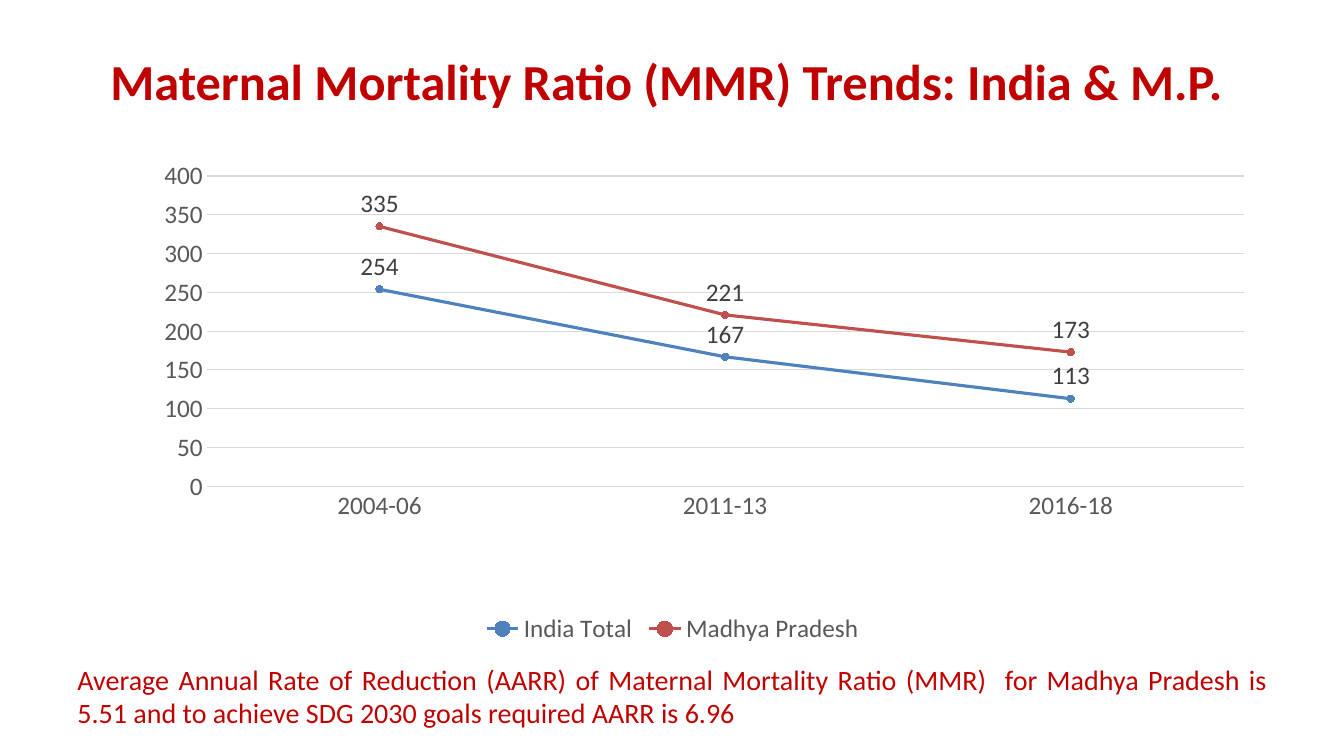
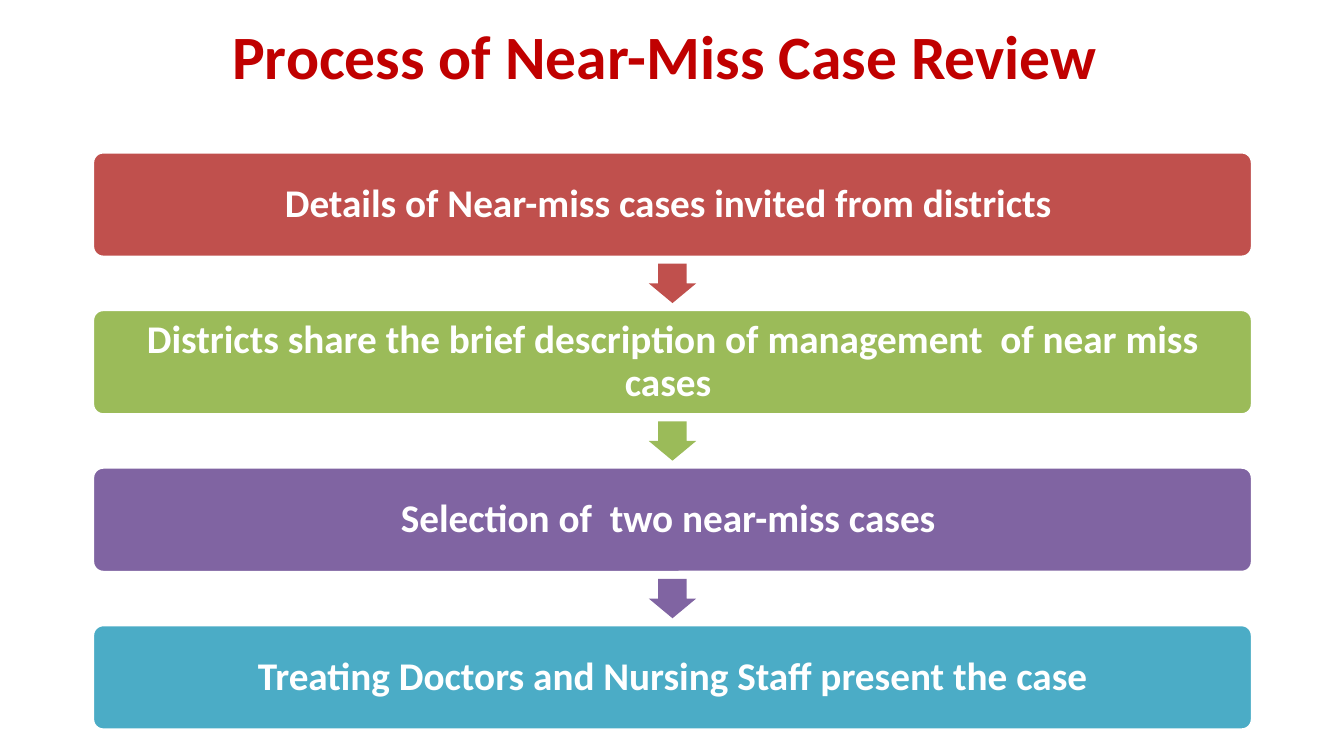
from lxml import etree
from pptx import Presentation
from pptx.chart.data import CategoryChartData
from pptx.dml.color import RGBColor
from pptx.enum.chart import (XL_CHART_TYPE, XL_LABEL_POSITION, XL_LEGEND_POSITION,
                             XL_MARKER_STYLE, XL_TICK_MARK)
from pptx.enum.shapes import MSO_SHAPE
from pptx.enum.text import MSO_ANCHOR, MSO_AUTO_SIZE, PP_ALIGN
from pptx.oxml.ns import qn
from pptx.util import Inches, Pt

LINE_MARKERS = XL_CHART_TYPE.LINE_MARKERS
LABEL_ABOVE = XL_LABEL_POSITION.ABOVE
LEGEND_BOTTOM = XL_LEGEND_POSITION.BOTTOM
CIRCLE = XL_MARKER_STYLE.CIRCLE
NO_TICK = XL_TICK_MARK.NONE
ROUND_RECT = MSO_SHAPE.ROUNDED_RECTANGLE
DOWN_ARROW = MSO_SHAPE.DOWN_ARROW
MIDDLE = MSO_ANCHOR.MIDDLE
NO_FIT, GROW = MSO_AUTO_SIZE.NONE, MSO_AUTO_SIZE.SHAPE_TO_FIT_TEXT
CENTER, JUSTIFY = PP_ALIGN.CENTER, PP_ALIGN.JUSTIFY

FONT = "Calibri"
COLORS = {
    "heading": "C00000", "white": "FFFFFF", "blue": "4F81BD", "red": "C0504D",
    "green": "9BBB59", "purple": "8064A2", "teal": "4BACC6",
    "grid": "D9D9D9", "axis": "595959", "label": "404040",
}
WIDTH, HEIGHT = 13.33, 7.5
TITLE_ONLY = 5


def rgb(name):
    return RGBColor.from_string(COLORS[name])


def set_font(font, size, color, bold=False):
    font.name, font.size, font.bold = FONT, Pt(size), bold
    font.color.rgb = rgb(color)


def set_line(line, color, width):
    line.color.rgb = rgb(color)
    line.width = Pt(width)


def set_plot_layout(chart, **fractions):
    """Fix the inner plot area as fractions of the chart frame."""
    plot_area = chart._chartSpace.find(f"{qn('c:chart')}/{qn('c:plotArea')}")
    for old in plot_area.findall(qn("c:layout")):
        plot_area.remove(old)
    layout = etree.Element(qn("c:layout"))
    manual = etree.SubElement(layout, qn("c:manualLayout"))
    settings = {"layoutTarget": "inner", "xMode": "edge", "yMode": "edge", **fractions}
    for tag, value in settings.items():
        etree.SubElement(manual, qn(f"c:{tag}")).set("val", str(value))
    plot_area.insert(0, layout)


class DeckBuilder:
    def __init__(self):
        self.deck = Presentation()
        self.deck.slide_width, self.deck.slide_height = Inches(WIDTH), Inches(HEIGHT)
        self.page = None

    def add_page(self, title, size, left, top, width, height):
        self.page = self.deck.slides.add_slide(self.deck.slide_layouts[TITLE_ONLY])
        box = self.page.shapes.title
        box.left, box.top = Inches(left), Inches(top)
        box.width, box.height = Inches(width), Inches(height)
        self.fill_text(box.text_frame, title, size, "heading", CENTER, bold=True)
        box.text_frame.vertical_anchor = MIDDLE
        box.text_frame.auto_size = NO_FIT

    def fill_text(self, frame, text, size, color, align, bold=False):
        frame.word_wrap = True
        para = frame.paragraphs[0]
        para.text, para.alignment = text, align
        set_font(para.font, size, color, bold)
        return para

    def note(self, text, left, top, width, height):
        box = self.page.shapes.add_textbox(
            Inches(left), Inches(top), Inches(width), Inches(height))
        self.fill_text(box.text_frame, text, 20, "heading", JUSTIFY)
        box.text_frame.auto_size = GROW

    def shape(self, kind, left, top, width, height, color, adjustments):
        shape = self.page.shapes.add_shape(
            kind, Inches(left), Inches(top), Inches(width), Inches(height))
        shape.shadow.inherit = False
        shape.fill.solid()
        shape.fill.fore_color.rgb = rgb(color)
        shape.line.fill.background()
        for index, value in enumerate(adjustments):
            shape.adjustments[index] = value
        return shape

    def step(self, text, left, top, width, height, color):
        box = self.shape(ROUND_RECT, left, top, width, height, color, [0.1])
        set_line(box.line, "white", 2)
        frame = box.text_frame
        frame.margin_left = frame.margin_right = Inches(0.15)
        frame.margin_top = frame.margin_bottom = Inches(0.12)
        frame.vertical_anchor = MIDDLE
        para = self.fill_text(frame, text, 28, "white", CENTER, bold=True)
        para.line_spacing = 0.9

    def line_chart(self, categories, series, left, top, width, height):
        """Draw a line chart; series maps a name to its values and colour."""
        data = CategoryChartData()
        data.categories = categories
        for name, (values, _) in series.items():
            data.add_series(name, values)
        chart = self.page.shapes.add_chart(
            LINE_MARKERS, Inches(left), Inches(top), Inches(width), Inches(height),
            data).chart
        set_font(chart.font, 18, "axis")
        chart.has_title = False
        chart.has_legend = True
        chart.legend.position = LEGEND_BOTTOM
        chart.legend.include_in_layout = False
        set_font(chart.legend.font, 18, "axis")
        for axis in (chart.category_axis, chart.value_axis):
            axis.major_tick_mark = axis.minor_tick_mark = NO_TICK
            set_font(axis.tick_labels.font, 18, "axis")
        set_line(chart.category_axis.format.line, "grid", 0.75)
        values_axis = chart.value_axis
        values_axis.format.line.fill.background()
        values_axis.minimum_scale, values_axis.maximum_scale = 0, 400
        values_axis.major_unit = 50
        set_line(values_axis.major_gridlines.format.line, "grid", 0.75)
        chart.plots[0].vary_by_categories = False
        for line, (_, color) in zip(chart.plots[0].series, series.values()):
            self.style_series(line, color)
        set_plot_layout(chart, x=0.115, y=0.046, w=0.857, h=0.626)

    def style_series(self, line, color):
        line.smooth = False
        set_line(line.format.line, color, 2.25)
        line.marker.style, line.marker.size = CIRCLE, 5
        line.marker.format.fill.solid()
        line.marker.format.fill.fore_color.rgb = rgb(color)
        set_line(line.marker.format.line, color, 0.75)
        labels = line.data_labels
        labels.show_value, labels.position = True, LABEL_ABOVE
        set_font(labels.font, 18, "label")


def add_trend_page(builder):
    left, width = 0.67, 12
    builder.add_page("Maternal Mortality Ratio (MMR) Trends: India & M.P. ", 36,
                     left, 0.3, width, 0.99)
    series = {
        "India Total": ((254, 167, 113), "blue"),
        "Madhya Pradesh": ((335, 221, 173), "red"),
    }
    builder.line_chart(("2004-06", "2011-13", "2016-18"), series,
                       left, 1.52, width, 4.92)
    builder.note("Average Annual Rate of Reduction (AARR) of Maternal Mortality Ratio "
                 "(MMR)  for Madhya Pradesh is 5.51 and to achieve SDG 2030 goals "
                 "required AARR is 6.96", left, 6.52, width, 0.77)


def add_process_page(builder):
    builder.add_page("Process of Near-Miss Case Review ", 44, 0, 0, WIDTH, 1.09)
    steps = [
        ("Details of Near-miss cases invited from districts ", "red"),
        ("Districts share the brief description of management  of near miss cases ",
         "green"),
        ("Selection of  two near-miss cases ", "purple"),
        ("Treating Doctors and Nursing Staff present the case", "teal"),
    ]
    left, width, height = 0.92, 11.5, 1.04
    first_top, last_top = 1.51, 6.2
    pitch = (last_top - first_top) / (len(steps) - 1)
    arrow_width, arrow_height = 0.47, 0.39
    arrow_left = left + (width - arrow_width) / 2
    arrow_offset = (pitch + height - arrow_height) / 2
    for index, (text, color) in enumerate(steps):
        top = first_top + index * pitch
        builder.step(text, left, top, width, height, color)
        if index < len(steps) - 1:
            builder.shape(DOWN_ARROW, arrow_left, top + arrow_offset,
                          arrow_width, arrow_height, color, [0.6, 0.5])


def main():
    builder = DeckBuilder()
    add_trend_page(builder)
    add_process_page(builder)
    builder.deck.save("out.pptx")


if __name__ == "__main__":
    main()
